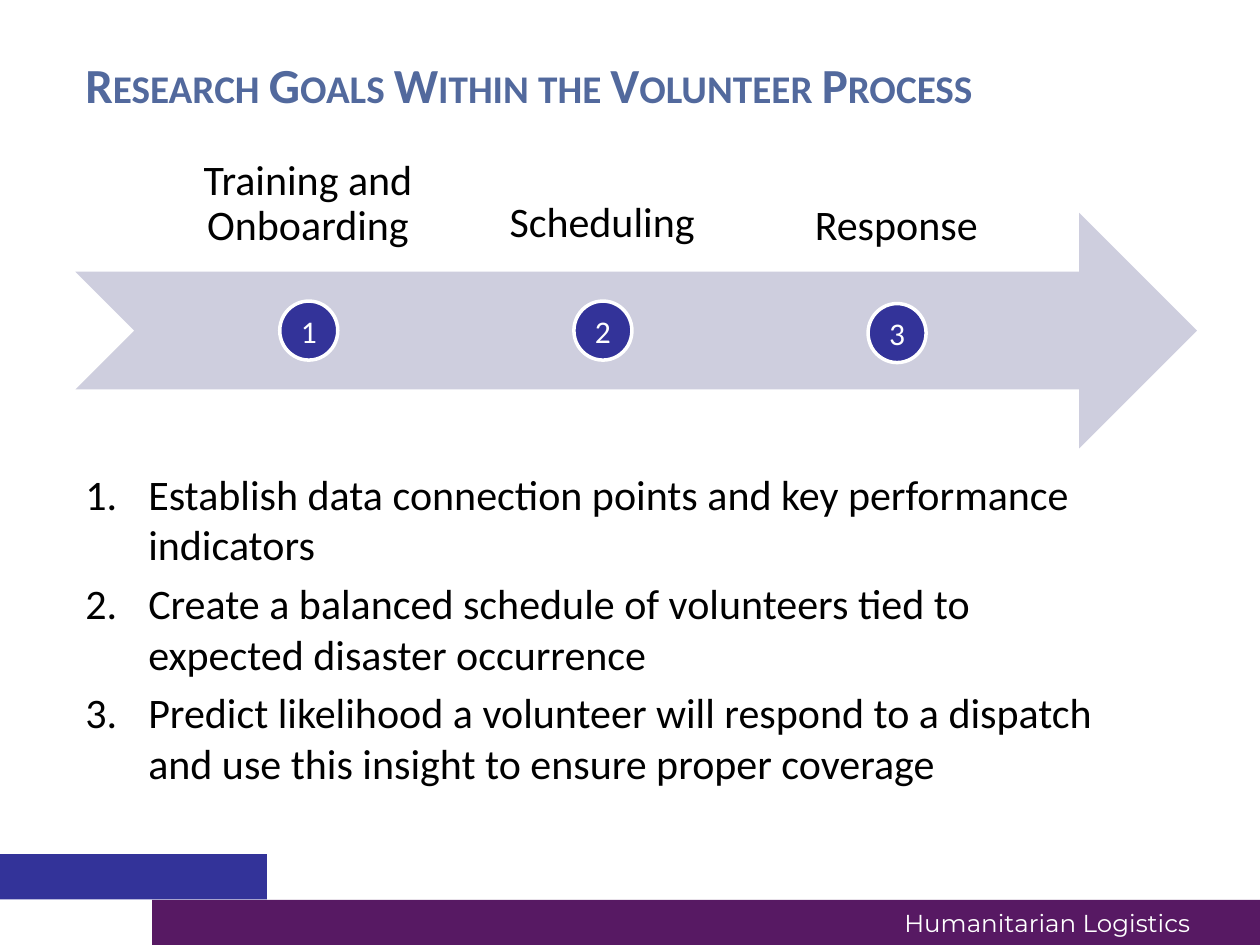
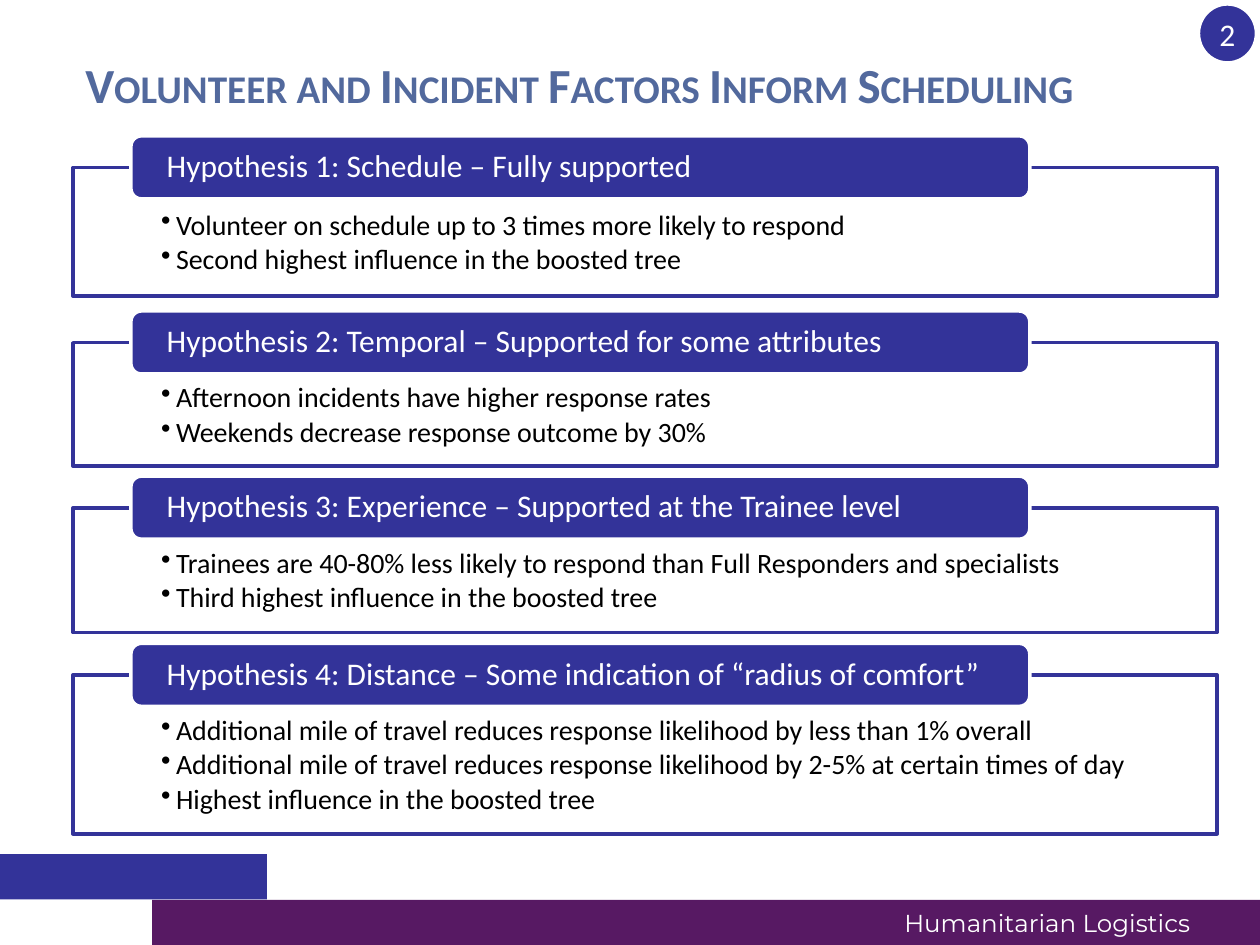
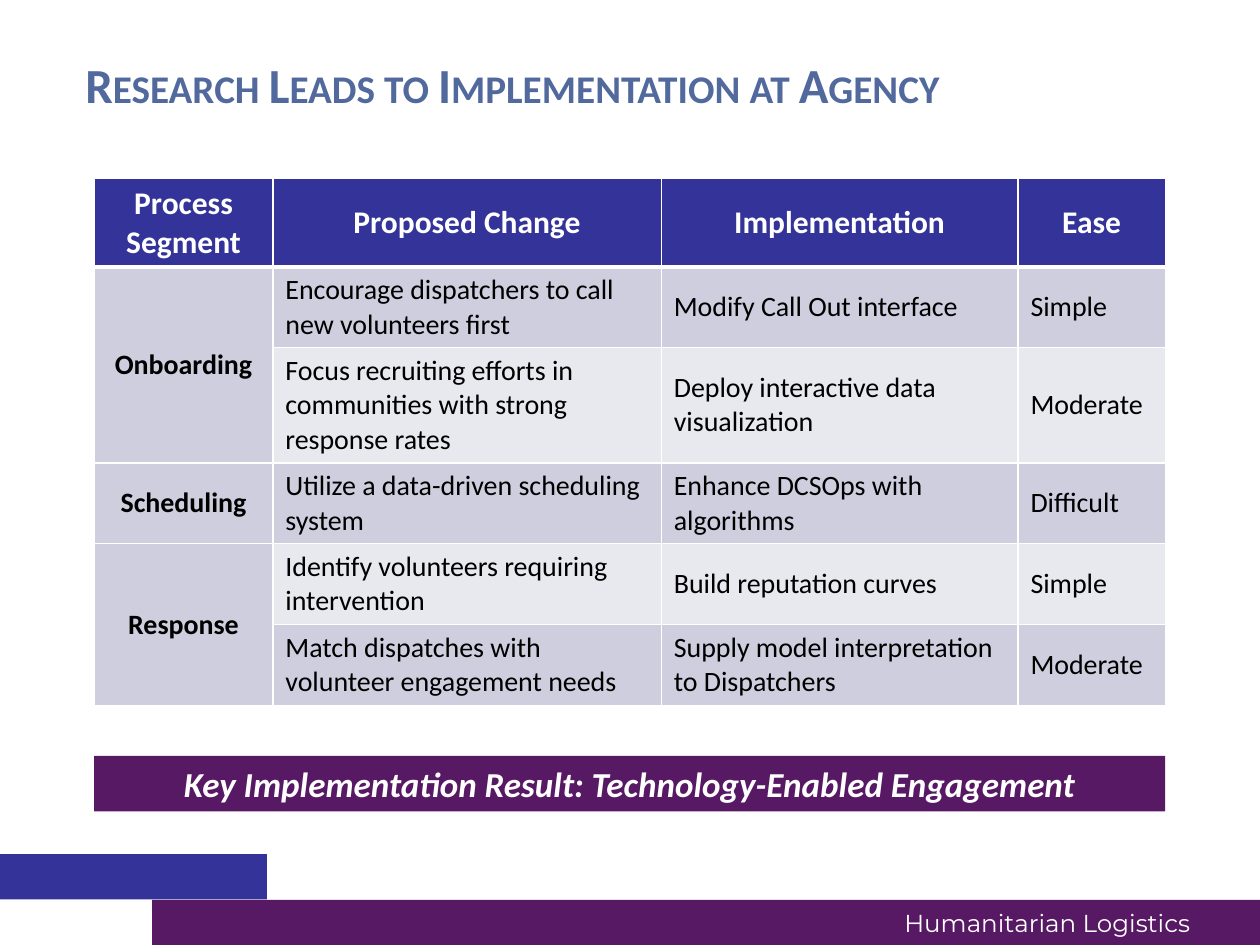
"""Build three slides on volunteer research goals, hypotheses and implementation."""
from lxml.etree import SubElement
from pptx import Presentation
from pptx.dml.color import RGBColor
from pptx.enum.shapes import MSO_SHAPE
from pptx.enum.text import MSO_ANCHOR, PP_ALIGN
from pptx.oxml import parse_xml
from pptx.oxml.ns import nsdecls, qn
from pptx.util import Cm, Pt

INDIGO = RGBColor(0x33, 0x33, 0x99)
PURPLE = RGBColor(0x57, 0x19, 0x63)
SLATE = RGBColor(0x52, 0x69, 0x9D)
LAVENDER = RGBColor(0xCE, 0xCE, 0xDE)
PALE = RGBColor(0xE8, 0xE8, 0xEF)
WHITE = RGBColor(0xFF, 0xFF, 0xFF)
BLACK = RGBColor(0, 0, 0)

FOOTER = "Humanitarian Logistics"
NUMBERED = ("buAutoNum", {"type": "arabicPeriod"})
DOTTED = ("buChar", {"char": "•"})

GOALS_TITLE = "Research Goals Within the Volunteer Process"
STAGES = [
    ("Training and Onboarding", 2.01, 3.61, 6.07),
    ("Scheduling", 3.4, 2.03, 6.07),
    ("Response", 3.38, 2.11, 6.12),
]
GOALS = [
    "Establish data connection points and key performance indicators",
    "Create a balanced schedule of volunteers tied to expected disaster occurrence",
    "Predict likelihood a volunteer will respond to a dispatch and use this insight "
    "to ensure proper coverage",
]

FACTORS_TITLE = "Volunteer and Incident Factors Inform Scheduling"
HYPOTHESES = [
    ("Hypothesis 1: Schedule – Fully supported", 3.38, 2.59, [
        "Volunteer on schedule up to 3 times more likely to respond",
        "Second highest influence in the boosted tree"]),
    ("Hypothesis 2: Temporal – Supported for some attributes", 6.91, 2.49, [
        "Afternoon incidents have higher response rates",
        "Weekends decrease response outcome by 30%"]),
    ("Hypothesis 3: Experience – Supported at the Trainee level", 10.24, 2.51, [
        "Trainees are 40-80% less likely to respond than Full Responders and specialists",
        "Third highest influence in the boosted tree"]),
    ("Hypothesis 4: Distance – Some indication of “radius of comfort”", 13.61, 3.2, [
        "Additional mile of travel reduces response likelihood by less than 1% overall",
        "Additional mile of travel reduces response likelihood by 2-5% at certain times of day",
        "Highest influence in the boosted tree"]),
]

CHANGES_TITLE = "Research Leads to Implementation at Agency"
CHANGES = [
    ("Process Segment", "Proposed Change", "Implementation", "Ease"),
    ("Onboarding", "Encourage dispatchers to call new volunteers first",
     "Modify Call Out interface", "Simple"),
    ("", "Focus recruiting efforts in communities with strong response rates",
     "Deploy interactive data visualization", "Moderate"),
    ("Scheduling", "Utilize a data-driven scheduling system",
     "Enhance DCSOps with algorithms", "Difficult"),
    ("Response", "Identify volunteers requiring intervention",
     "Build reputation curves", "Simple"),
    ("", "Match dispatches with volunteer engagement needs",
     "Supply model interpretation to Dispatchers", "Moderate"),
]
COLUMN_WIDTHS = [3.6, 7.83, 7.19, 2.97]
ROW_HEIGHTS = [1.78, 1.63, 2.32, 1.63, 1.63, 1.63]
MERGED_ROWS = [(1, 2), (4, 5)]
KEY_RESULT = "Key Implementation Result: Technology-Enabled Engagement"


def write(tf, lines, size, color, align=PP_ALIGN.LEFT, anchor=MSO_ANCHOR.TOP, font="Calibri",
          bold=False, italic=False, spacing=None, before=0, after=0, bullet=None, indent=0):
    """Fill a text frame with equally formatted paragraphs."""
    tf.word_wrap = True
    tf.vertical_anchor = anchor
    tf.text = "\n".join(lines)
    for i, p in enumerate(tf.paragraphs):
        if bullet:
            tag, attributes = bullet
            pPr = p._p.get_or_add_pPr()
            pPr.set("marL", str(Cm(indent)))
            pPr.set("indent", str(-Cm(indent)))
            SubElement(pPr, qn(f"a:{tag}"), attributes)
        p.alignment = align
        p.line_spacing = spacing
        p.space_before = Pt(before if i else 0)
        p.space_after = Pt(after)
        for r in p.runs:
            r.font.name, r.font.size = font, Pt(size)
            r.font.bold, r.font.italic = bold, italic
            r.font.color.rgb = color


def set_margins(tf, left, top, right, bottom):
    """Set the four insets of a text frame in centimetres."""
    tf.margin_left, tf.margin_top = Cm(left), Cm(top)
    tf.margin_right, tf.margin_bottom = Cm(right), Cm(bottom)


def add_box(s, left, top, width, height):
    """Add a text box and return its text frame."""
    return s.shapes.add_textbox(Cm(left), Cm(top), Cm(width), Cm(height)).text_frame


def add_shape(s, kind, left, top, width, height, fill, line=None):
    """Add a flat preset shape with an optional 2 pt outline."""
    sp = s.shapes.add_shape(kind, Cm(left), Cm(top), Cm(width), Cm(height))
    sp.shadow.inherit = False
    sp.fill.solid()
    sp.fill.fore_color.rgb = fill
    if line is None:
        sp.line.fill.background()
    else:
        sp.line.color.rgb = line
        sp.line.width = Pt(2)
    return sp


def add_badge(s, left, top, number):
    """Add a numbered circle."""
    tf = add_shape(s, MSO_SHAPE.OVAL, left, top, 1.17, 1.19, INDIGO, WHITE).text_frame
    set_margins(tf, 0, 0, 0, 0)
    write(tf, [str(number)], 18, WHITE, PP_ALIGN.CENTER, MSO_ANCHOR.MIDDLE)


def add_slide(prs, title, title_width=21.59):
    """Add a slide with the shared bands, footer and title."""
    s = prs.slides.add_slide(prs.slide_layouts[6])
    add_shape(s, MSO_SHAPE.RECTANGLE, 3.07, 18.14, 22.33, 0.91, PURPLE)
    add_shape(s, MSO_SHAPE.RECTANGLE, 0, 17.22, 5.38, 0.91, INDIGO)
    write(add_box(s, 17.98, 18.19, 7.42, 0.86), [FOOTER], 14, WHITE, font="Montserrat")
    tf = add_box(s, 1.47, 0.64, title_width, 2.11)
    write(tf, [title], 28, SLATE, anchor=MSO_ANCHOR.MIDDLE, bold=True)
    tf.paragraphs[0].runs[0].font._element.set("cap", "small")
    return s


def build_goals(prs):
    """Show the three process stages and the goal of each."""
    s = add_slide(prs, GOALS_TITLE)
    write(add_box(s, 1.47, 9.32, 21.59, 7.04), GOALS, 24, BLACK,
          before=4.8, bullet=NUMBERED, indent=1.27)
    add_shape(s, MSO_SHAPE.NOTCHED_RIGHT_ARROW, 1.52, 4.29, 22.61, 4.75, LAVENDER)
    for i, (stage, top, height, badge_top) in enumerate(STAGES):
        offset = 5.93 * i
        tf = add_box(s, 3.15 + offset, top, 6.12, height)
        set_margins(tf, 0.58, 0.58, 0.58, 0.58)
        write(tf, [stage], 24, BLACK, PP_ALIGN.CENTER, MSO_ANCHOR.BOTTOM, spacing=0.9)
        add_badge(s, 5.64 + offset, badge_top, i + 1)


def build_factors(prs):
    """Show each hypothesis as a header on a framed list of findings."""
    s = add_slide(prs, FACTORS_TITLE, 22.23)
    for hypothesis, top, height, findings in HYPOTHESES:
        tf = add_shape(s, MSO_SHAPE.RECTANGLE, 1.47, top, 23.07, height, WHITE, INDIGO).text_frame
        set_margins(tf, 1.78, 0.69, 1.78, 0.23)
        write(tf, findings, 16, BLACK, anchor=MSO_ANCHOR.MIDDLE,
              spacing=0.9, after=2.4, bullet=DOTTED, indent=0.3)
        tf = add_shape(s, MSO_SHAPE.ROUNDED_RECTANGLE, 2.64, top - 0.64, 18.12, 1.27,
                       INDIGO, WHITE).text_frame
        set_margins(tf, 0.66, 0.05, 0.66, 0.05)
        write(tf, [hypothesis], 18, WHITE, anchor=MSO_ANCHOR.MIDDLE, spacing=0.9)
    add_badge(s, 24.16, 0.08, 2)


def set_borders(cell, row):
    """Draw white cell borders, thicker under the header row."""
    widths = {"L": 1, "R": 1, "T": 3 if row == 1 else 1, "B": 3 if row == 0 else 1}
    for i, (side, width) in enumerate(widths.items()):
        cell._tc.get_or_add_tcPr().insert(i, parse_xml(
            f'<a:ln{side} {nsdecls("a")} w="{Pt(width)}"><a:solidFill>'
            f'<a:srgbClr val="{WHITE}"/></a:solidFill></a:ln{side}>'))


def build_changes(prs):
    """Show the table of proposed changes and the key result."""
    s = add_slide(prs, CHANGES_TITLE)
    table = s.shapes.add_table(len(CHANGES), len(COLUMN_WIDTHS), Cm(1.9), Cm(3.6),
                               Cm(sum(COLUMN_WIDTHS)), Cm(sum(ROW_HEIGHTS))).table
    for column, width in zip(table.columns, COLUMN_WIDTHS):
        column.width = Cm(width)
    for row, height in zip(table.rows, ROW_HEIGHTS):
        row.height = Cm(height)
    for i, values in enumerate(CHANGES):
        for j, value in enumerate(values):
            cell = table.cell(i, j)
            header, label = i == 0, i == 0 or j == 0
            cell.fill.solid()
            cell.fill.fore_color.rgb = INDIGO if header else LAVENDER if label or i % 2 else PALE
            set_borders(cell, i)
            cell.vertical_anchor = MSO_ANCHOR.MIDDLE
            if value:
                write(cell.text_frame, [value], 18 if header else 16, WHITE if header else BLACK,
                      PP_ALIGN.CENTER if label else PP_ALIGN.LEFT, None, bold=label)
    for first, last in MERGED_ROWS:
        table.cell(first, 0).merge(table.cell(last, 0))
    bar = add_shape(s, MSO_SHAPE.RECTANGLE, 1.9, 15.24, 21.59, 1.12, PURPLE)
    write(bar.text_frame, [KEY_RESULT], 20, WHITE, PP_ALIGN.CENTER, MSO_ANCHOR.MIDDLE,
          bold=True, italic=True)


def main():
    """Build and save the presentation."""
    prs = Presentation()
    prs.slide_width, prs.slide_height = Cm(25.4), Cm(19.05)
    build_goals(prs)
    build_factors(prs)
    build_changes(prs)
    prs.save("out.pptx")


if __name__ == "__main__":
    main()
